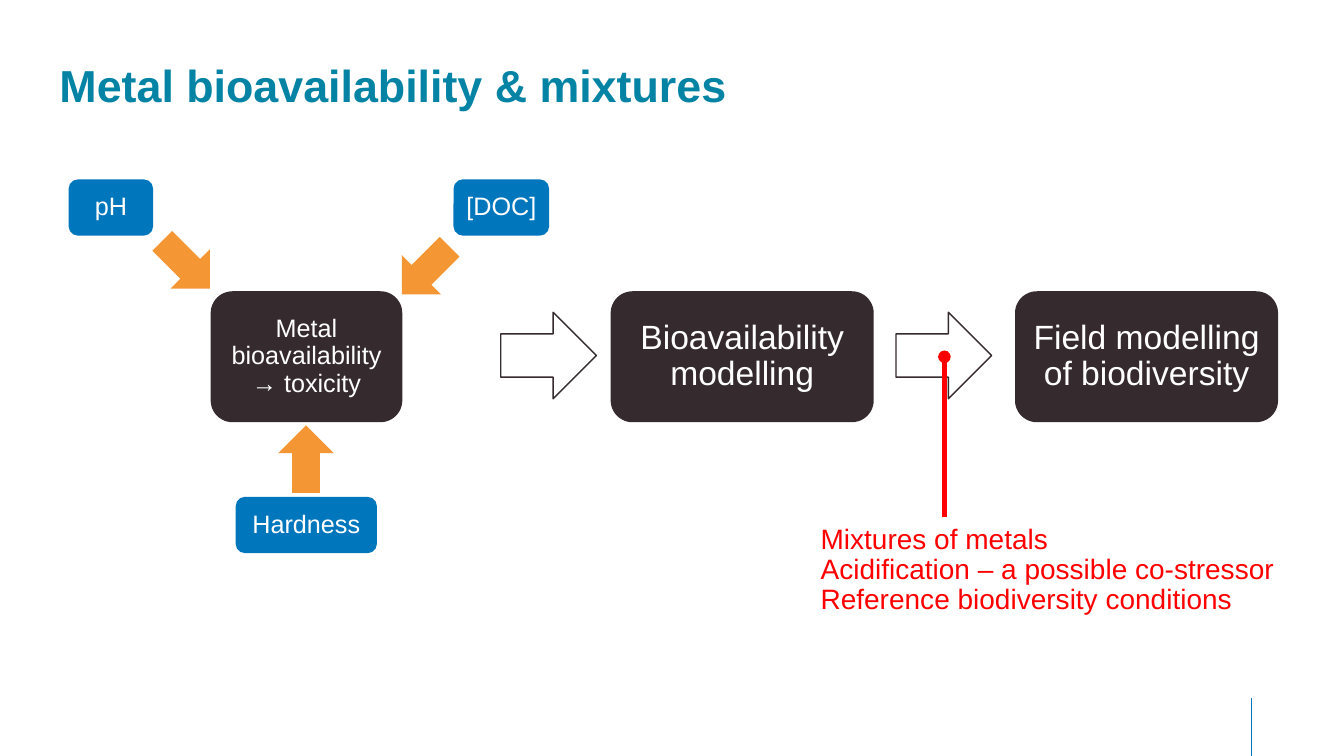
from lxml import etree
from pptx import Presentation
from pptx.dml.color import RGBColor
from pptx.enum import shapes, text
from pptx.oxml.ns import qn
from pptx.util import Cm, Pt

TEAL = RGBColor(0x04, 0x83, 0xA4)
BLUE = RGBColor(0x00, 0x76, 0xBD)
DARK = RGBColor(0x35, 0x2B, 0x2F)
ORANGE = RGBColor(0xF4, 0x96, 0x33)
RED = RGBColor(0xFF, 0x00, 0x00)
WHITE = RGBColor(0xFF, 0xFF, 0xFF)
SHAPE = shapes.MSO_SHAPE

prs = Presentation()
prs.slide_width, prs.slide_height = Cm(33.87), Cm(19.05)
s = prs.slides.add_slide(prs.slide_layouts[6])


def write(sp, lines, size, color, align=text.PP_ALIGN.LEFT, bold=False):
    tf = sp.text_frame
    tf.text = "\n".join(lines)
    for p in tf.paragraphs:
        p.alignment = align
        p.line_spacing = 0.9
        for r in p.runs:
            r.font.name = "Arial"
            r.font.size = Pt(size)
            r.font.bold = bold
            r.font.color.rgb = color
    return tf


def add_line(x, y1, y2, color, width):
    """Draw a vertical line at x and return its a:ln element."""
    ln = s.shapes.add_connector(shapes.MSO_CONNECTOR.STRAIGHT, Cm(x), Cm(y1), Cm(x), Cm(y2))
    ln.line.color.rgb = color
    ln.line.width = Pt(width)
    sp_pr = ln._element.spPr
    etree.SubElement(sp_pr, qn("a:effectLst"))
    return sp_pr.find(qn("a:ln"))


add_line(31.52, 17.6, 19.05, BLUE, 0.25)

# Title
title = s.shapes.add_textbox(Cm(1.5), Cm(1.5), Cm(30.86), Cm(1.42))
tf = write(title, ["Metal bioavailability & mixtures"], 32, TEAL, bold=True)
tf.word_wrap = True
tf.vertical_anchor = text.MSO_ANCHOR.MIDDLE
tf.margin_left = tf.margin_right = tf.margin_top = tf.margin_bottom = 0

# Process steps and the water chemistry factors
STEP_Y, STEP_H, FACTOR_H = 7.34, 3.3, 1.42
boxes = [
    ("Metal bioavailability → toxicity", 5.31, STEP_Y, 4.83, STEP_H, DARK, 18),
    ("Bioavailability modelling", 15.39, STEP_Y, 6.63, STEP_H, DARK, 24),
    ("Field modelling of biodiversity", 25.58, STEP_Y, 6.63, STEP_H, DARK, 24),
    ("pH", 1.73, 4.52, 2.13, FACTOR_H, BLUE, 18),
    ("[DOC]", 11.43, 4.52, 2.41, FACTOR_H, BLUE, 18),
    ("Hardness", 5.94, 12.52, 3.56, FACTOR_H, BLUE, 18),
]
for label, x, y, w, h, color, size in boxes:
    sp = s.shapes.add_shape(SHAPE.ROUNDED_RECTANGLE, Cm(x), Cm(y), Cm(w), Cm(h))
    sp.shadow.inherit = False
    sp.fill.solid()
    sp.fill.fore_color.rgb = color
    sp.line.fill.background()
    tf = write(sp, [label], size, WHITE, text.PP_ALIGN.CENTER)
    tf.word_wrap = True
    tf.vertical_anchor = text.MSO_ANCHOR.MIDDLE

# Factor arrows point at the first step
for x, y, angle in [(3.99, 5.82, 315), (10.03, 5.97, 45), (7.01, 10.72, 180)]:
    sp = s.shapes.add_shape(SHAPE.DOWN_ARROW, Cm(x), Cm(y), Cm(1.4), Cm(1.7))
    sp.rotation = angle
    sp.shadow.inherit = False
    sp.fill.solid()
    sp.fill.fore_color.rgb = ORANGE
    sp.line.fill.background()

# Arrows between steps
for x in (12.62, 22.58):
    sp = s.shapes.add_shape(SHAPE.RIGHT_ARROW, Cm(x), Cm(7.87), Cm(2.41), Cm(2.18))
    sp.shadow.inherit = False
    sp.fill.solid()
    sp.fill.fore_color.rgb = WHITE
    sp.line.color.rgb = DARK
    sp.line.width = Pt(1)

# Callout
pointer = add_line(23.8, 13.03, 8.99, RED, 3)
etree.SubElement(pointer, qn("a:tailEnd"), type="oval")
callout = s.shapes.add_textbox(Cm(20.68), Cm(13.23), Cm(11.68), Cm(2.49))
tf = write(callout, ["Mixtures of metals", "Acidification – a possible co-stressor",
                     "Reference biodiversity conditions"], 20, RED)
tf.word_wrap = False
tf.margin_left = tf.margin_right = tf.margin_top = tf.margin_bottom = 0

prs.save("out.pptx")
